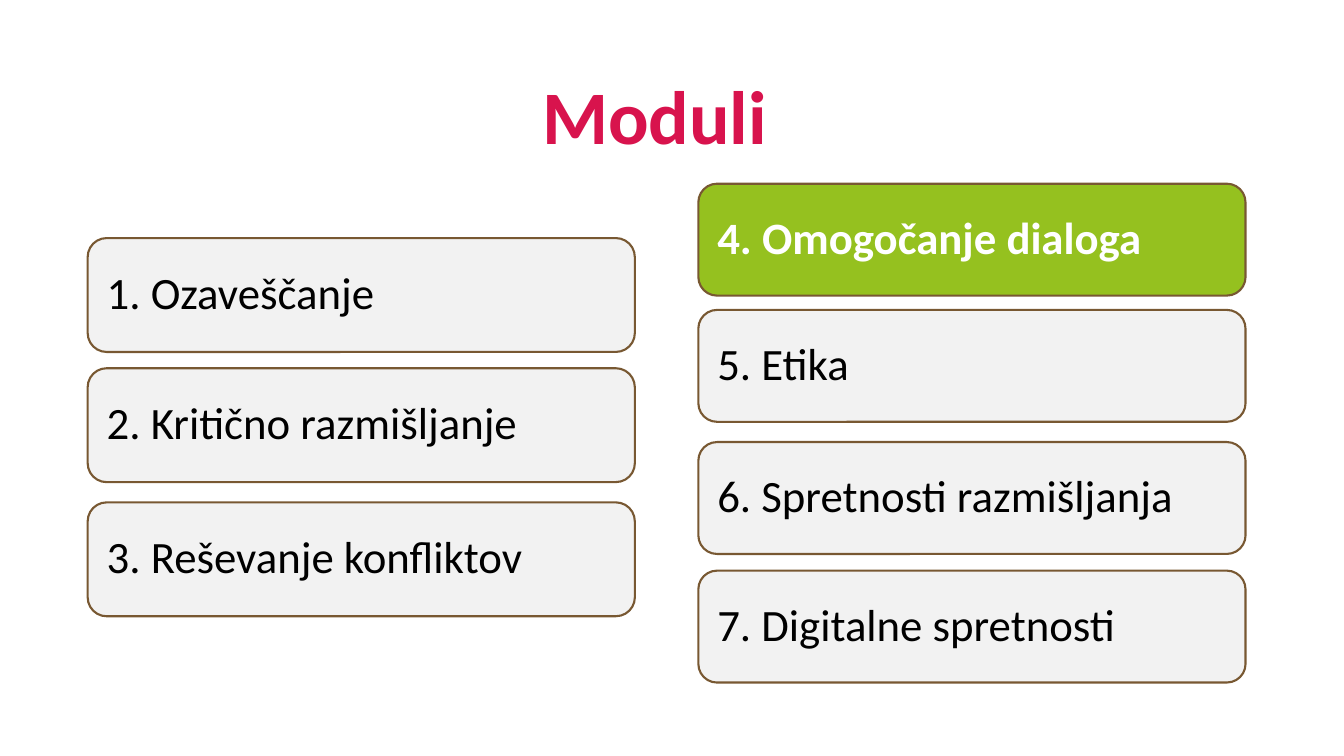
from dataclasses import dataclass

from pptx import Presentation
from pptx.dml.color import RGBColor
from pptx.enum import shapes, text
from pptx.util import Cm, Pt


@dataclass(frozen=True)
class Theme:
    font: str = "Calibri"
    title_size: Pt = Pt(54)
    module_size: Pt = Pt(32)
    outline_width: Pt = Pt(1.5)
    title: RGBColor = RGBColor(0xD8, 0x13, 0x4D)
    ink: RGBColor = RGBColor(0, 0, 0)
    white: RGBColor = RGBColor(0xFF, 0xFF, 0xFF)
    panel: RGBColor = RGBColor(0xF2, 0xF2, 0xF2)
    highlight: RGBColor = RGBColor(0x95, 0xC1, 0x1F)
    outline: RGBColor = RGBColor(0x78, 0x58, 0x32)


THEME = Theme()
CURRENT_MODULE = "4. Omogočanje dialoga"

# Each module with its distance in cm from the top of its column
FIRST_MODULES = [
    ("1. Ozaveščanje", 0),
    ("2. Kritično razmišljanje", 3.28),
    ("3. Reševanje konfliktov", 6.66),
]
LAST_MODULES = [
    (CURRENT_MODULE, 0),
    ("5. Etika", 3.18),
    ("6. Spretnosti razmišljanja", 6.51),
    ("7. Digitalne spretnosti", 9.75),
]


def format_paragraph(paragraph, size, color, bold, align):
    paragraph.alignment = align
    paragraph.line_spacing = 0.9
    paragraph.font.name = THEME.font
    paragraph.font.size = size
    paragraph.font.bold = bold
    paragraph.font.color.rgb = color


def place_title(slide, left, top, width, height):
    heading = slide.shapes.title
    heading.left, heading.top = left, top
    heading.width, heading.height = width, height
    frame = heading.text_frame
    frame.text = "Moduli"
    frame.vertical_anchor = text.MSO_ANCHOR.BOTTOM
    format_paragraph(frame.paragraphs[0], THEME.title_size, THEME.title, True,
                     text.PP_ALIGN.CENTER)


def add_module(column, module, left, top, width, height):
    is_current = module == CURRENT_MODULE
    card = column.shapes.add_shape(shapes.MSO_SHAPE.ROUNDED_RECTANGLE,
                                   left, top, width, height)
    card.shadow.inherit = False
    card.fill.solid()
    card.fill.fore_color.rgb = THEME.highlight if is_current else THEME.panel
    card.line.color.rgb = THEME.outline
    card.line.width = THEME.outline_width

    frame = card.text_frame
    frame.word_wrap = True
    frame.vertical_anchor = text.MSO_ANCHOR.MIDDLE
    # The rounded corners already add part of the side inset
    frame.margin_left = frame.margin_right = Cm(0.34)
    frame.margin_top = frame.margin_bottom = Cm(0.34)
    frame.text = module
    format_paragraph(frame.paragraphs[0], THEME.module_size,
                     THEME.white if is_current else THEME.ink, is_current,
                     text.PP_ALIGN.LEFT)


def add_module_column(slide, modules, left, top, width, card_height):
    column = slide.shapes.add_group_shape()
    for module, offset in modules:
        add_module(column, module, left, top + Cm(offset), width, card_height)


def main():
    deck = Presentation()
    deck.slide_width, deck.slide_height = Cm(33.87), Cm(19.05)
    slide = deck.slides.add_slide(deck.slide_layouts[5])

    # Title
    place_title(slide, Cm(0.03), Cm(-0.76), Cm(32.94), Cm(4.95))

    # Two columns of modules
    add_module_column(slide, FIRST_MODULES, Cm(2.21), Cm(6), Cm(13.79), Cm(2.87))
    add_module_column(slide, LAST_MODULES, Cm(17.6), Cm(4.63), Cm(13.79), Cm(2.82))

    deck.save("out.pptx")


if __name__ == "__main__":
    main()
